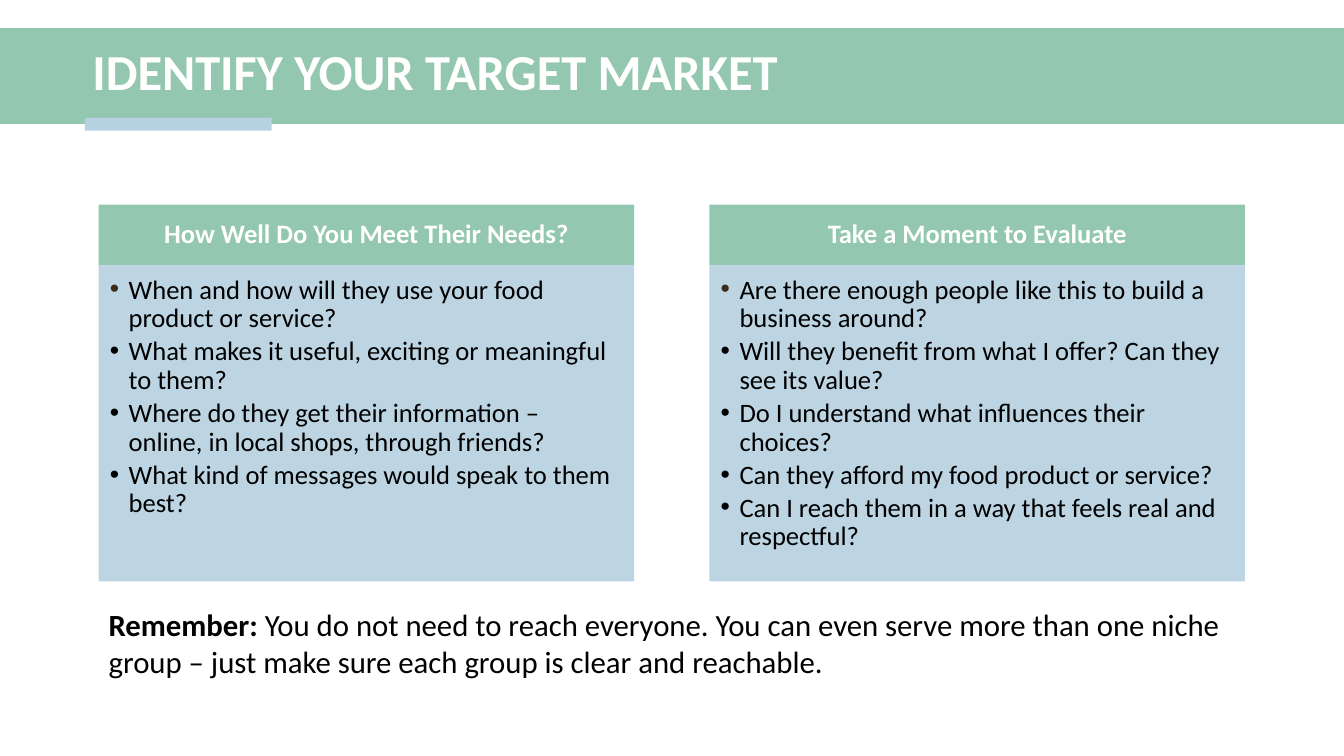
import pptx
import pptx.dml.color
import pptx.enum.shapes
import pptx.enum.text
import pptx.oxml.ns
import pptx.util
from lxml import etree

Pt = pptx.util.Pt
ALIGN = pptx.enum.text.PP_ALIGN
ANCHOR = pptx.enum.text.MSO_ANCHOR
COLORS = {
    "green": "94C7B0",
    "blue": "B6D1E1",
    "white": "FFFFFF",
    "black": "000000",
    "brown": "382B1B",
}
CARDS = [
    ("How Well Do You Meet Their Needs?", [
        "When and how will they use your food product or service?",
        "What makes it useful, exciting or meaningful to them?",
        "Where do they get their information – online, in local shops, through friends?",
        "What kind of messages would speak to them best?",
    ]),
    ("Take a Moment to Evaluate", [
        "Are there enough people like this to build a business around?",
        "Will they benefit from what I offer? Can they see its value?",
        "Do I understand what influences their choices?",
        "Can they afford my food product or service?",
        "Can I reach them in a way that feels real and respectful?",
    ]),
]

deck = pptx.Presentation()
deck.slide_width = Pt(960)
deck.slide_height = Pt(540)
page = deck.slides.add_slide(deck.slide_layouts[6])


def add_block(left, top, width, height, color):
    block = page.shapes.add_shape(
        pptx.enum.shapes.MSO_SHAPE.RECTANGLE, Pt(left), Pt(top), Pt(width), Pt(height))
    block.shadow.inherit = False
    block.fill.solid()
    block.fill.fore_color.rgb = pptx.dml.color.RGBColor.from_string(COLORS[color])
    block.line.fill.background()
    block.text_frame.word_wrap = True
    return block


def add_span(para, text, size, color, bold=False):
    span = para.add_run()
    span.text = text
    span.font.name = "Calibri"
    span.font.size = Pt(size)
    span.font.bold = bold
    span.font.color.rgb = pptx.dml.color.RGBColor.from_string(COLORS[color])


add_block(0, 20, 960, 68.5, "green")
add_block(60.7, 84.3, 133.4, 9, "blue")

title = page.shapes.add_textbox(Pt(59), Pt(24.5), Pt(859), Pt(57)).text_frame
title.word_wrap = True
title.vertical_anchor = ANCHOR.MIDDLE
title.paragraphs[0].line_spacing = 0.9
add_span(title.paragraphs[0], "IDENTIFY YOUR TARGET MARKET", 36, "white", True)

for column, (heading, questions) in enumerate(CARDS):
    left = 70.5 + column * 436.3

    header = add_block(left, 146.2, 382.5, 43, "green").text_frame
    header.vertical_anchor = ANCHOR.MIDDLE
    header.paragraphs[0].alignment = ALIGN.CENTER
    header.paragraphs[0].line_spacing = 0.9
    add_span(header.paragraphs[0], heading, 19, "white", True)

    panel = add_block(left, 189.2, 382.5, 226, "blue")
    fill_color = panel.fill._xPr.find(".//" + pptx.oxml.ns.qn("a:srgbClr"))
    etree.SubElement(fill_color, pptx.oxml.ns.qn("a:alpha"), val="90000")
    body = panel.text_frame
    body.vertical_anchor = ANCHOR.TOP
    body.margin_left = body.margin_top = Pt(8)
    body.margin_right = Pt(10.7)
    body.margin_bottom = Pt(12)
    for index, question in enumerate(questions):
        para = body.paragraphs[0] if index == 0 else body.add_paragraph()
        properties = para._p.get_or_add_pPr()
        properties.set("marL", str(Pt(13.5)))
        properties.set("indent", str(-Pt(13.5)))
        bullet_color = etree.SubElement(properties, pptx.oxml.ns.qn("a:buClr"))
        etree.SubElement(bullet_color, pptx.oxml.ns.qn("a:srgbClr"),
                         val=COLORS["brown" if index == 0 else "black"])
        etree.SubElement(properties, pptx.oxml.ns.qn("a:buFont"), typeface="Arial")
        etree.SubElement(properties, pptx.oxml.ns.qn("a:buChar"), char="•")
        para.alignment = ALIGN.LEFT
        para.line_spacing = 0.9
        para.space_after = Pt(3)
        add_span(para, question, 19, "black")

reminder = page.shapes.add_textbox(Pt(70.5), Pt(429), Pt(818.8), Pt(60.5)).text_frame
reminder.word_wrap = True
add_span(reminder.paragraphs[0], "Remember: ", 22, "black", True)
add_span(reminder.paragraphs[0],
         "You do not need to reach everyone. You can even serve more than one niche "
         "group – just make sure each group is clear and reachable.", 22, "black")

deck.save("out.pptx")
